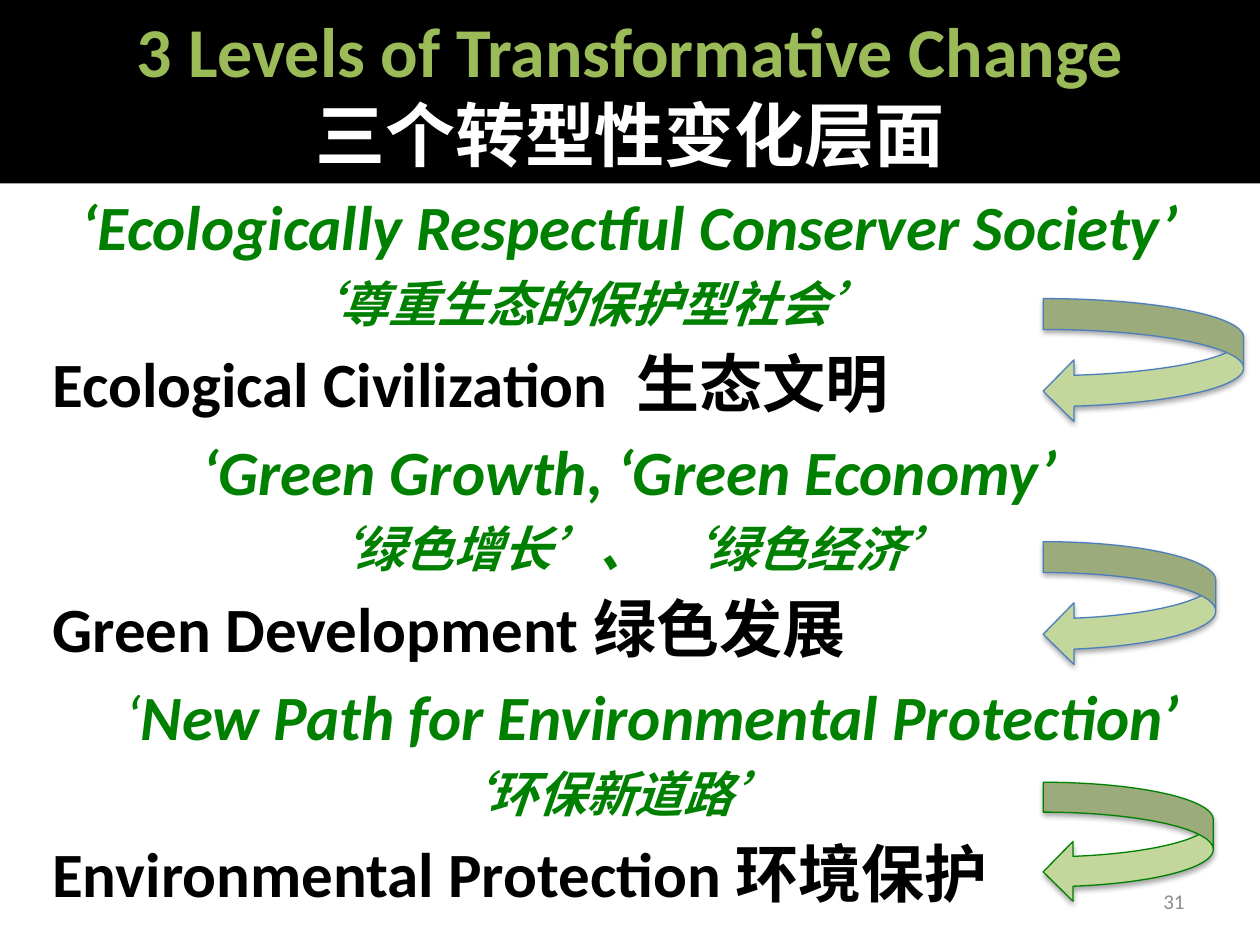
from lxml import etree
from pptx import Presentation
from pptx import util as u
from pptx.dml.color import RGBColor
from pptx.enum import shapes, text
from pptx.oxml import parse_xml
from pptx.oxml.ns import qn

GREEN, BLACK, WHITE = "008000", "000000", "FFFFFF"


def colour(value):
    return RGBColor.from_string(value)


def add_run(paragraph, words, fill, **formats):
    run = paragraph.add_run()
    run.text = words
    for name, value in {"name": "Calibri", "bold": True, **formats}.items():
        setattr(run.font, name, value)
    run.font.color.rgb = colour(fill)


presentation = Presentation()
presentation.slide_width, presentation.slide_height = u.Cm(25.4), u.Cm(19.05)
slide = presentation.slides.add_slide(presentation.slide_layouts[1])
title, body = slide.placeholders

for shape, place in ((title, (0, 0, 25.4, 3.7)), (body, (0, 3.66, 25.4, 15.75))):
    for name, value in zip(("left", "top", "width", "height"), place):
        setattr(shape, name, u.Cm(value))
    shape.text_frame.auto_size = text.MSO_AUTO_SIZE.NONE

title.fill.solid()
title.fill.fore_color.rgb = colour(BLACK)
title.text_frame.vertical_anchor = text.MSO_ANCHOR.MIDDLE
heading = title.text_frame.paragraphs[0]
heading.alignment = text.PP_ALIGN.CENTER
add_run(heading, "3 Levels of Transformative Change", "9BBB59", size=u.Pt(40))
heading.add_line_break()
add_run(heading, "三个转型性变化层面", WHITE, size=u.Pt(40))

CENTER, LEFT = text.PP_ALIGN.CENTER, text.PP_ALIGN.LEFT
goal = {"fill": GREEN, "italic": True, "size": u.Pt(36)}
translation = {**goal, "size": u.Pt(28)}
level = {"fill": BLACK, "italic": False, "size": u.Pt(36)}
lines = [
    (["‘Ecologically Respectful Conserver Society’"], goal, CENTER, 0),
    (["‘尊重生态的保护型社会’"], translation, LEFT, 5.6),
    (["Ecological Civilization  生态文明"], level, LEFT, 0.8),
    (["‘Green Growth, ‘Green Economy’"], goal, CENTER, 0),
    (["‘绿色增长’、 ‘绿色经济’"], translation, CENTER, 0),
    (["Green Development 绿色发展"], level, LEFT, 0.8),
    (["‘", "New Path for Environmental Protection’"], goal, CENTER, 0.9),
    (["‘环保新道路’"], translation, LEFT, 8.6),
    (["Environmental Protection 环境保护"], level, LEFT, 0.8),
]
for index, (parts, formats, alignment, indent) in enumerate(lines):
    frame = body.text_frame
    paragraph = frame.add_paragraph() if index else frame.paragraphs[0]
    paragraph.alignment = alignment
    properties = paragraph._p.get_or_add_pPr()
    properties.set("marL", str(u.Cm(indent)))
    properties.set("indent", "0")
    etree.SubElement(properties, qn("a:buNone"))
    for part in parts:
        add_run(paragraph, part, **formats, bold=part != "‘")

number = slide.shapes.add_textbox(u.Cm(18.2), u.Cm(17.65), u.Cm(5.93), u.Cm(1.02))
number.text_frame.word_wrap = True
number.text_frame.vertical_anchor = text.MSO_ANCHOR.MIDDLE
number.text_frame.paragraphs[0].alignment = text.PP_ALIGN.RIGHT
add_run(number.text_frame.paragraphs[0], "31", "8C8C8C", size=u.Pt(12), bold=False)

SHADOW = (
    '<a:effectLst xmlns:a="http://schemas.openxmlformats.org/drawingml/2006/main">'
    '<a:outerShdw blurRad="40000" dist="23000" dir="5400000" rotWithShape="0">'
    '<a:srgbClr val="000000"><a:alpha val="35000"/></a:srgbClr>'
    "</a:outerShdw></a:effectLst>"
)
arrows = [
    (6.02, 4.04, 2.49, "4B7EBC"),
    (10.92, 3.48, 2.49, "4B7EBC"),
    (15.77, 3.43, 2.41, GREEN),
]
for top, width, height, outline in arrows:
    arrow = slide.shapes.add_shape(
        shapes.MSO_SHAPE.CURVED_LEFT_ARROW, u.Cm(21.03), u.Cm(top), u.Cm(width), u.Cm(height)
    )
    arrow.fill.solid()
    arrow.fill.fore_color.rgb = colour("C3D69B")
    arrow.line.color.rgb = colour(outline)
    arrow.line.width = u.Pt(0.75)
    arrow._element.spPr.append(parse_xml(SHADOW))

presentation.save("out.pptx")
